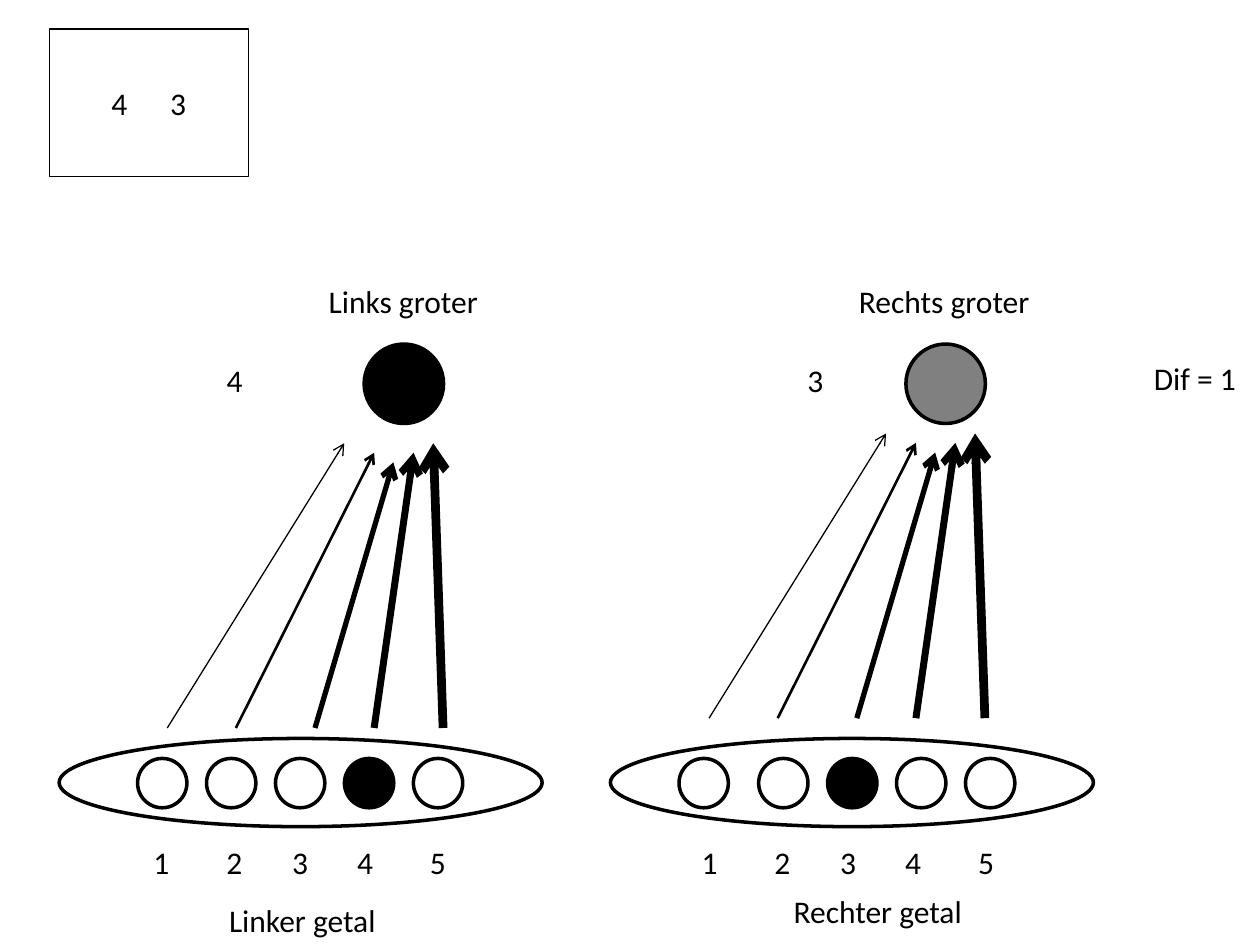
from dataclasses import dataclass

from lxml.etree import SubElement
from pptx import Presentation
from pptx.dml.color import RGBColor
from pptx.enum.shapes import MSO_CONNECTOR, MSO_SHAPE
from pptx.enum.text import MSO_ANCHOR, PP_ALIGN
from pptx.oxml.ns import qn
from pptx.util import Pt


@dataclass(frozen=True)
class Theme:
    """Colours, type and line widths."""

    black: RGBColor = RGBColor(0, 0, 0)
    gray: RGBColor = RGBColor(128, 128, 128)
    white: RGBColor = RGBColor(255, 255, 255)
    font: str = "Calibri"
    size: float = 18
    outline: float = 2
    thin: float = 0.75


class Sketch:
    """Draws the elements of the network on one slide."""

    def __init__(self, page, theme):
        self.page = page
        self.theme = theme

    def set_text(self, shape, text, stops=()):
        """Fill a shape with one styled paragraph, with optional tab stops."""
        para = shape.text_frame.paragraphs[0]
        para.alignment = PP_ALIGN.LEFT
        para.font.name = self.theme.font
        para.font.size = Pt(self.theme.size)
        span = para.add_run()
        span.text = text
        span.font.color.rgb = self.theme.black
        if stops:
            properties = para._p.get_or_add_pPr()
            tabs = SubElement(properties, qn("a:tabLst"))
            for stop in stops:
                SubElement(tabs, qn("a:tab"), pos=str(Pt(stop)), algn="l")
            properties.insert(0, tabs)

    def label(self, text, left, top, width, stops=()):
        """Add a one-line text box."""
        box = self.page.shapes.add_textbox(Pt(left), Pt(top), Pt(width), Pt(29))
        box.text_frame.word_wrap = bool(stops)
        self.set_text(box, text, stops)

    def outlined(self, kind, left, top, width, height, fill=None, line=None):
        """Add a preset shape with a black outline."""
        shape = self.page.shapes.add_shape(
            kind, Pt(left), Pt(top), Pt(width), Pt(height)
        )
        shape.shadow.inherit = False
        if fill is None:
            shape.fill.background()
        else:
            shape.fill.solid()
            shape.fill.fore_color.rgb = fill
        shape.line.color.rgb = self.theme.black
        shape.line.width = Pt(line or self.theme.outline)
        return shape

    def oval(self, left, top, width, height, fill=None):
        """Add an ellipse."""
        return self.outlined(MSO_SHAPE.OVAL, left, top, width, height, fill)

    def card(self, text, left, top, width, height, inset, stops):
        """Add the stimulus card with its numbers."""
        card = self.outlined(
            MSO_SHAPE.RECTANGLE, left, top, width, height,
            self.theme.white, self.theme.thin,
        )
        frame = card.text_frame
        frame.word_wrap = True
        frame.vertical_anchor = MSO_ANCHOR.MIDDLE
        frame.margin_left = Pt(inset)
        self.set_text(card, text, stops)

    def arrow(self, start, end, width):
        """Add a straight arrow."""
        arrow = self.page.shapes.add_connector(
            MSO_CONNECTOR.STRAIGHT, *(Pt(length) for length in start + end)
        )
        arrow.line.color.rgb = self.theme.black
        arrow.line.width = Pt(width)
        properties = arrow._element.spPr
        SubElement(properties.get_or_add_ln(), qn("a:tailEnd"), type="arrow")
        SubElement(properties, qn("a:effectLst"))

    def network(self, layer, units, active, weights, shift, lift, fill):
        """Add an input layer, its weighted arrows and the output node."""
        self.oval(layer, 422, 276, 50.4)
        for number, left in enumerate(units, start=1):
            self.oval(
                left, 433.4, 28.2, 28.2,
                self.theme.black if number == active else None,
            )
        for (foot, tip, top), width in weights:
            self.arrow(
                (foot + shift, 416 - lift), (tip + shift, top - lift), width
            )
        self.oval(208.1 + shift, 196.6, 45.4, 45.4, fill)


def main():
    """Build the number comparison slide."""
    deck = Presentation()
    deck.slide_width, deck.slide_height = Pt(720), Pt(540)
    theme = Theme()
    sketch = Sketch(deck.slides.add_slide(deck.slide_layouts[6]), theme)

    paths = [
        (95.6, 196.7, 253.3),
        (134.8, 213.8, 258.7),
        (180, 224.8, 264.2),
        (213.8, 236.3, 258.7),
        (253.2, 247.6, 253.3),
    ]
    weights = list(zip(paths, (theme.thin, 1.5, 3, 4, 5)))
    step = 39.4
    left_units = [78.6 + step * index for index in range(5)]
    right_units = [388] + [433.5 + step * index for index in range(4)]
    sketch.network(33.8, left_units, 4, weights, 0, 0, theme.black)
    sketch.network(348.8, right_units, 3, weights, 309.6, 5.6, theme.gray)

    scale = "\t".join("12345")
    for left in (80.6, 393.8):
        sketch.label(scale, left, 478.3, 185.8, (41.6, 79.2, 116.4, 158))
    for text, left, top, width in (
        ("Linker getal", 123.8, 511.2, 99.4),
        ("Rechter getal", 446.4, 506.2, 111.6),
        ("Links groter", 180.7, 157.7, 100.8),
        ("Rechts groter", 483.8, 157.7, 113),
        ("4", 122.4, 202.5, 23.8),
        ("3", 454.3, 202.5, 23.8),
        ("Dif = 1", 652.3, 201.6, 61.9),
    ):
        sketch.label(text, left, top, width)
    sketch.card("4\t3", 28.1, 16.6, 113.8, 84.2, 35.6, (33.6,))

    deck.save("out.pptx")


if __name__ == "__main__":
    main()
